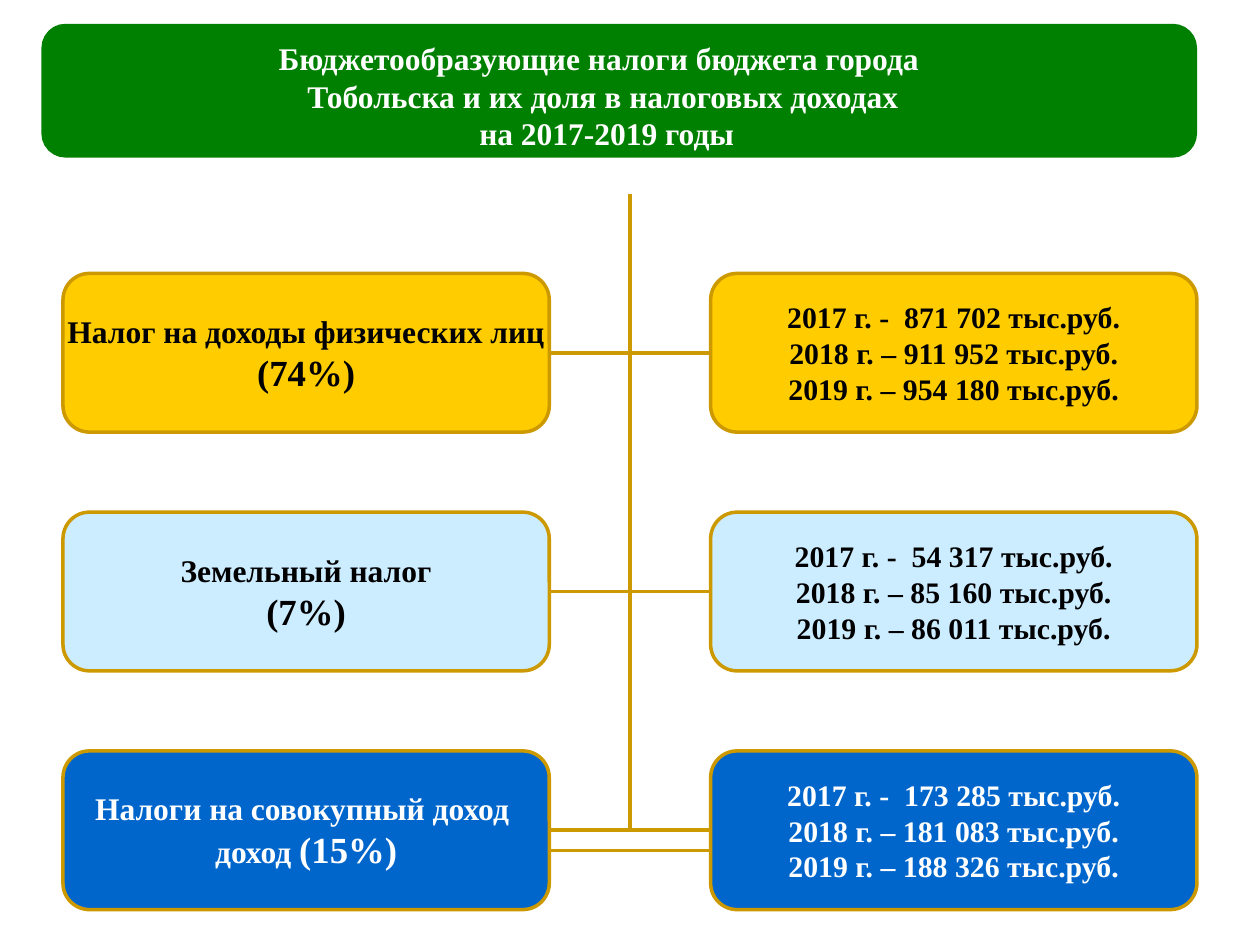
import pptx
import pptx.dml.color
import pptx.enum.shapes
import pptx.enum.text
import pptx.oxml
import pptx.oxml.ns
import pptx.util

WIDTH, HEIGHT = 10, 7.5
COLUMNS = (0.5, 5.64)
FIRST_ROW, ROW_STEP = 2.17, 1.895
BOX_WIDTH, BOX_HEIGHT = 3.86, 1.26
TRUNK_TOP = 1.54
GOLD, GREEN, WHITE, BLACK = "CC9900", "008000", "FFFFFF", "000000"

TITLE = (
    "Бюджетообразующие налоги бюджета города ",
    "Тобольска и их доля в налоговых доходах",
    " на 2017-2019 годы",
)
TAXES = (
    ("FFCC00", BLACK,
     [[("Налог на доходы физических лиц", 18)], [("(74%)", 21)]],
     ("2017 г. -  871 702 тыс.руб.", "2018 г. – 911 952 тыс.руб.", "2019 г. – 954 180 тыс.руб.")),
    ("CCECFF", BLACK,
     [[("Земельный налог", 18)], [("(7%)", 21)]],
     ("2017 г. -  54 317 тыс.руб.", "2018 г. – 85 160 тыс.руб.", "2019 г. – 86 011 тыс.руб.")),
    ("0066CC", WHITE,
     [[("Налоги на совокупный доход ", 18)], [("доход ", 18), ("(15%)", 21)]],
     ("2017 г. -  173 285 тыс.руб.", "2018 г. – 181 083 тыс.руб.", "2019 г. – 188 326 тыс.руб.")),
)


def color(hex_text):
    """Turn a hex string into a colour."""
    return pptx.dml.color.RGBColor.from_string(hex_text)


def inches(*lengths):
    """Turn numbers into a list of lengths in inches."""
    return [pptx.util.Inches(length) for length in lengths]


def row_top(row):
    """Give the top of a row of boxes."""
    return FIRST_ROW + row * ROW_STEP


def plain_lines(lines, size):
    """Give each line as a paragraph with one run of the given size."""
    return [[(line, size)] for line in lines]


def write_text(frame, paragraphs, ink=BLACK, font="Times New Roman", bold=True, margin=None, wrap=False,
               anchor=pptx.enum.text.MSO_ANCHOR.MIDDLE):
    """Fill a text frame with centred paragraphs of (text, size) runs."""
    frame.word_wrap = wrap
    frame.vertical_anchor = anchor
    if margin is not None:
        frame.margin_left = frame.margin_top = frame.margin_right = frame.margin_bottom = margin
    for index, runs in enumerate(paragraphs):
        paragraph = frame.add_paragraph() if index else frame.paragraphs[0]
        paragraph.alignment = pptx.enum.text.PP_ALIGN.CENTER
        for text, size in runs:
            run = paragraph.add_run()
            run.text = text
            run.font.name = font
            run.font.size = pptx.util.Pt(size)
            run.font.bold = bold
            run.font.color.rgb = color(ink)


def add_box(slide, left, top, width, height, fill, line, weight):
    """Add a rounded rectangle."""
    shape = slide.shapes.add_shape(
        pptx.enum.shapes.MSO_SHAPE.ROUNDED_RECTANGLE, *inches(left, top, width, height))
    shape.shadow.inherit = False
    shape.adjustments[0] = 0.167
    shape.fill.solid()
    shape.fill.fore_color.rgb = color(fill)
    shape.line.color.rgb = color(line)
    shape.line.width = pptx.util.Pt(weight)
    return shape


def add_line(slide, begin, end, weight, elbow=False):
    """Add a gold line, straight or with one right-angled bend."""
    kinds = pptx.enum.shapes.MSO_CONNECTOR
    connector = slide.shapes.add_connector(
        kinds.ELBOW if elbow else kinds.STRAIGHT, *inches(*begin, *end))
    connector.line.color.rgb = color(GOLD)
    connector.line.width = pptx.util.Pt(weight)
    properties = connector._element.spPr
    if elbow:
        properties.find(pptx.oxml.ns.qn("a:prstGeom")).set("prst", "bentConnector2")
    properties.append(pptx.oxml.parse_xml(f"<a:effectLst {pptx.oxml.ns.nsdecls('a')}/>"))


def add_branches(slide):
    """Join both columns of every row to the trunk, from the bottom row up."""
    for row in reversed(range(len(TAXES))):
        middle = row_top(row) + BOX_HEIGHT / 2
        for side in (COLUMNS[1], COLUMNS[0] + BOX_WIDTH):
            add_line(slide, (side, middle), (WIDTH / 2, TRUNK_TOP), 2.25, elbow=True)


def add_tax_row(slide, row, fill, ink, name, amounts):
    """Add the name box and the amounts box of one tax."""
    for left, paragraphs in zip(COLUMNS, (name, plain_lines(amounts, 17))):
        box = add_box(slide, left, row_top(row), BOX_WIDTH, BOX_HEIGHT, fill, GOLD, 2)
        write_text(box.text_frame, paragraphs, ink=ink, margin=0)


def add_title(slide):
    """Add the green banner and the title over it."""
    add_box(slide, 0.35, 0.21, 9.13, 1.02, GREEN, GREEN, 3)
    title = slide.shapes.add_textbox(*inches(0, 0.26, 9.57, 1))
    write_text(title.text_frame, plain_lines(TITLE, 18), ink=WHITE, wrap=True,
               anchor=pptx.enum.text.MSO_ANCHOR.TOP)


def main():
    """Build the slide and save it."""
    presentation = pptx.Presentation()
    presentation.slide_width, presentation.slide_height = inches(WIDTH, HEIGHT)
    slide = presentation.slides.add_slide(presentation.slide_layouts[6])
    add_line(slide, (0.5, HEIGHT * 0.9), (9.5, HEIGHT * 0.9), 1.5)
    add_branches(slide)
    for row, tax in enumerate(TAXES):
        add_tax_row(slide, row, *tax)
    add_title(slide)
    presentation.save("out.pptx")


if __name__ == "__main__":
    main()
